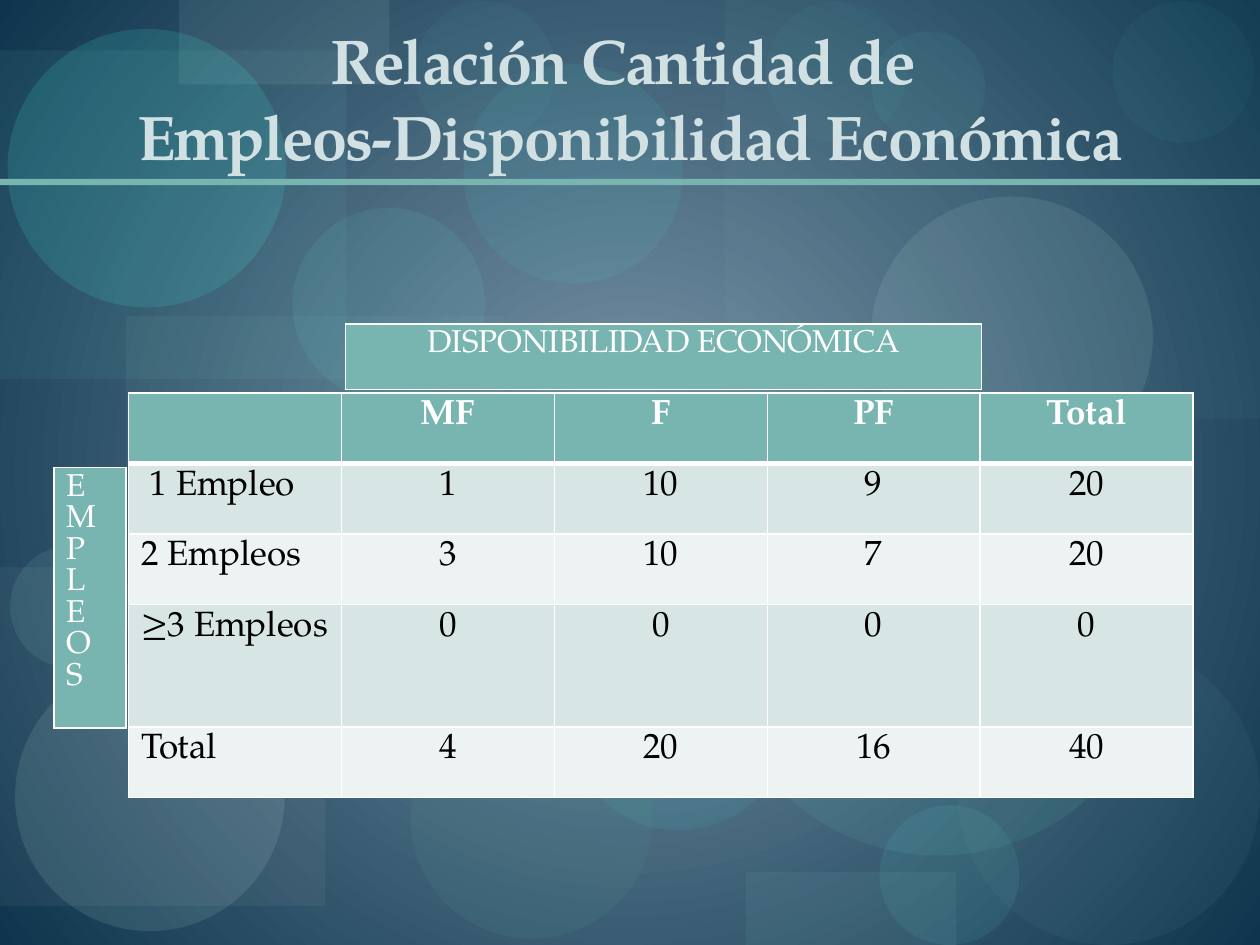
"""Build the slide on jobs held against economic means."""
import pptx
import pptx.dml.color
import pptx.enum.shapes
import pptx.enum.text
import pptx.oxml
import pptx.oxml.ns
import pptx.util

Inches, Pt = pptx.util.Inches, pptx.util.Pt
Shape = pptx.enum.shapes.MSO_SHAPE
Align = pptx.enum.text.PP_ALIGN
NS = pptx.oxml.ns.nsdecls("a")

FONT = "TeX Gyre Pagella"
TEAL, WHITE, BLACK = "79B5B0", "FFFFFF", "000000"
BANDS = ["D7E5E4", "ECF3F2"]
TITLE = "Relación Cantidad de \vEmpleos-Disponibilidad Económica"
HEAD = ["", "MF", "F", "PF", "Total"]
BODY = [
    [" 1 Empleo", "1", "10", "9", "20"],
    ["2 Empleos", "3", "10", "7", "20"],
    ["≥3 Empleos", "0", "0", "0", "0"],
    ["Total", "4", "20", "16", "40"],
]
ROWS = [0.56, 0.56, 0.56, 0.97, 0.56]
COLS = [1.69] * 5
TOP = "DISPONIBILIDAD ECONÓMICA"
SIDE = "\n".join("EMPLEOS")

RECT, OVAL = Shape.RECTANGLE, Shape.OVAL
DECOR = [
    (RECT, 1, 2.51, 3, 2.33, TEAL, 9),
    (OVAL, 3.26, 5.55, 1.92, 1.9, "549791", 13),
    (RECT, 5.75, 0, 4.25, 3.33, TEAL, 6),
    (RECT, 0, 4.5, 2.58, 2.69, "B2B7BA", 8),
    (OVAL, 4.57, 2.61, 2.38, 2.38, "70A39E", 8),
    (OVAL, 6.98, 6.39, 1.11, 1.11, "65E8DC", 9),
    (OVAL, 6.91, 1.56, 2.24, 2.24, "C1E8E4", 11),
    (OVAL, 0.12, 5.25, 2.14, 2.14, "C1E8E4", 12),
    (OVAL, 2.21, 5.01, 1.12, 1.12, "65E8DC", 9),
    (OVAL, 4.56, 5.06, 1.66, 1.53, "44EADC", 8),
    (RECT, 0, 0.4, 2.75, 2.61, "77D6CE", 7),
    (RECT, 1.42, 0, 1.67, 0.67, "BED7D4", 10),
    (OVAL, 0.06, 0.23, 2.21, 2.21, "44EADC", 15),
    (OVAL, 0.08, 4.33, 0.97, 0.97, "97DCD6", 10),
    (OVAL, 2.32, 1.65, 1.53, 1.53, "65E8DC", 9),
    (OVAL, 3.68, 0.51, 1.74, 1.74, "44EADC", 8),
    (OVAL, 5.68, 3.25, 3.54, 3.54, "61CDC4", 10),
    (OVAL, 6.08, 0.01, 1.12, 1.12, "65E8DC", 4),
    (OVAL, 7.6, 5.1, 2.4, 2.4, "70A39E", 8),
    (OVAL, 1.75, 4.05, 1.31, 1.31, "97DCD6", 10),
    (OVAL, 6.92, 0.25, 0.9, 0.9, "65E8DC", 6),
    (OVAL, 8.83, 0.01, 1.12, 1.12, "65E8DC", 4),
    (RECT, 5.92, 6.92, 1.67, 0.58, TEAL, 10),
    (OVAL, 3.29, 0.01, 1.12, 1.12, "65E8DC", 4),
    (RECT, 0, 1.42, 10, 0.05, TEAL, 100),
]


def paint(fill, tint):
    fill.solid()
    fill.fore_color.rgb = pptx.dml.color.RGBColor.from_string(tint)


def write(frame, text, size=20, tint=BLACK, bold=False, align=Align.LEFT, gap=None):
    frame.text = text
    for para in frame.paragraphs:
        para.alignment = align
        if gap:
            para.line_spacing = Pt(gap)
        for run in para.runs:
            font = run.font
            font.name, font.size, font.bold = FONT, Pt(size), bold
            paint(font.fill, tint)


def border(cell, top=1, base=1):
    props = cell._tc.get_or_add_tcPr()
    for side, width in zip("LRTB", (1, 1, top, base)):
        props.append(pptx.oxml.parse_xml(
            f'<a:ln{side} {NS} w="{Pt(width)}"><a:solidFill>'
            f'<a:srgbClr val="{WHITE}"/></a:solidFill></a:ln{side}>'))


def grid(slide, left, top, cols, rows):
    size = [Inches(n) for n in (left, top, sum(cols), sum(rows))]
    table = slide.shapes.add_table(len(rows), len(cols), *size).table
    for col, width in zip(table.columns, cols):
        col.width = Inches(width)
    for row, height in zip(table.rows, rows):
        row.height = Inches(height)
    return table


def label(slide, left, top, width, height, text, **form):
    cell = grid(slide, left, top, [width], [height]).cell(0, 0)
    border(cell)
    paint(cell.fill, TEAL)
    write(cell.text_frame, text, size=18, tint=WHITE, **form)


def backdrop(slide):
    fill = slide.background.fill
    fill.gradient()
    for stop, tint in zip(fill.gradient_stops, ("7B96AA", "0E354D")):
        stop.color.rgb = pptx.dml.color.RGBColor.from_string(tint)
    for stop, place in zip(fill.gradient_stops, (0, 1)):
        stop.position = place
    line = slide._element.find(".//" + pptx.oxml.ns.qn("a:lin"))
    line.getparent().replace(line, pptx.oxml.parse_xml(
        f'<a:path {NS} path="circle"><a:fillToRect l="50000" t="50000" '
        'r="50000" b="50000"/></a:path>'))
    for kind, *box, tint, alpha in DECOR:
        shape = slide.shapes.add_shape(kind, *map(Inches, box))
        shape.shadow.inherit = False
        shape.line.fill.background()
        paint(shape.fill, tint)
        if alpha < 100:
            color = shape._element.spPr.find(".//" + pptx.oxml.ns.qn("a:srgbClr"))
            color.append(pptx.oxml.parse_xml(f'<a:alpha {NS} val="{alpha * 1000}"/>'))


def main():
    deck = pptx.Presentation()
    deck.slide_width, deck.slide_height = Inches(10), Inches(7.5)
    slide = deck.slides.add_slide(deck.slide_layouts[6])
    backdrop(slide)

    frame = slide.shapes.add_textbox(*map(Inches, (0.5, 0.17, 9, 1.25))).text_frame
    frame.word_wrap = True
    frame.vertical_anchor = pptx.enum.text.MSO_ANCHOR.BOTTOM
    write(frame, TITLE, size=36, tint="D1E1E3", bold=True, align=Align.CENTER)
    for run in frame.paragraphs[0].runs:
        run.font._element.set("spc", "-100")

    table = grid(slide, 1.02, 3.12, COLS, ROWS)
    for r, row in enumerate([HEAD] + BODY):
        for c, text in enumerate(row):
            cell, head = table.cell(r, c), r == 0
            border(cell, top=3 if r == 1 else 1, base=3 if head else 1)
            paint(cell.fill, TEAL if head else BANDS[(r - 1) % 2])
            write(cell.text_frame, text, tint=WHITE if head else BLACK, bold=head,
                  align=Align.CENTER if c else Align.LEFT)

    label(slide, 2.74, 2.57, 5.05, 0.52, TOP, align=Align.CENTER)
    label(slide, 0.43, 3.71, 0.57, 2.07, SIDE, gap=18)
    deck.save("out.pptx")


if __name__ == "__main__":
    main()
